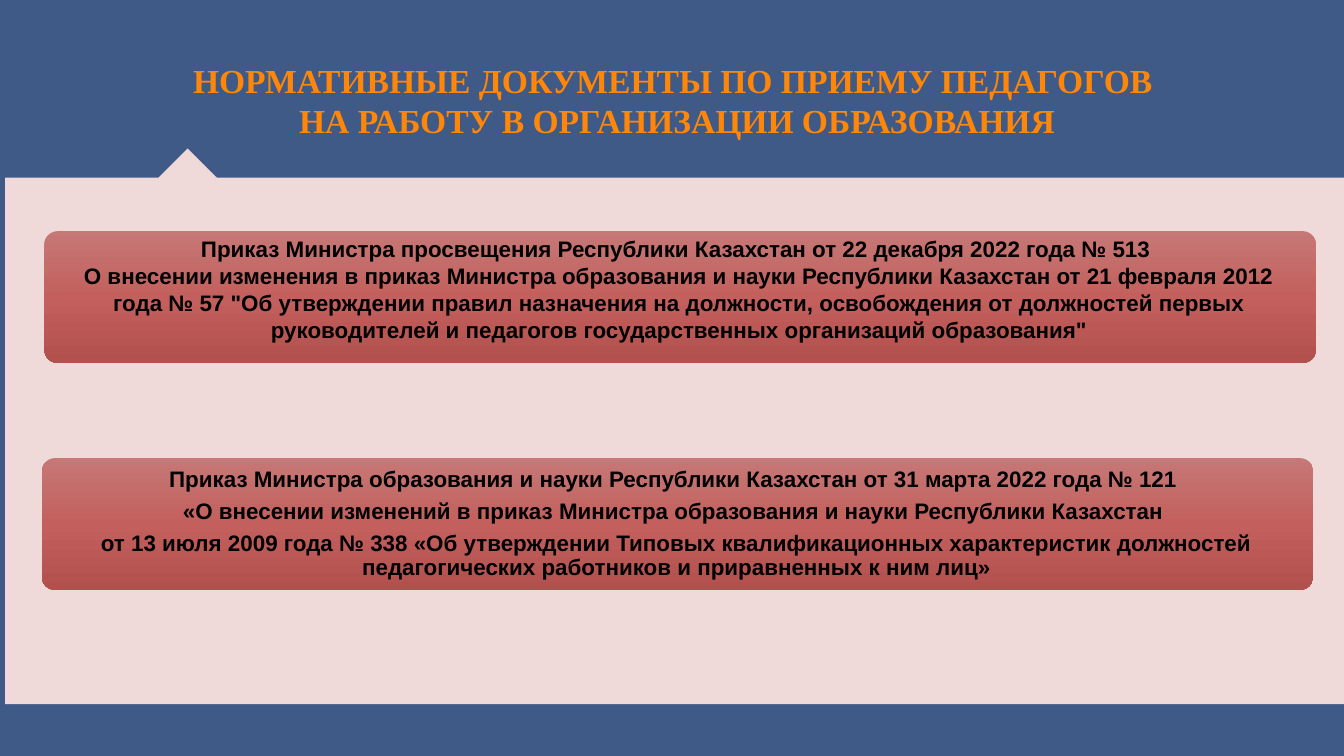
import copy
from dataclasses import dataclass

import pptx
import pptx.dml.color
import pptx.enum.shapes
import pptx.enum.text
import pptx.oxml.ns
import pptx.util
from pptx.util import Cm

KIND = pptx.enum.shapes.MSO_SHAPE
ANCHOR = pptx.enum.text.MSO_ANCHOR


@dataclass(frozen=True)
class Theme:
    back: str = "3F5A87"
    panel: str = "F0D9D9"
    title: str = "FF8607"
    ink: str = "000000"
    card: tuple[str, ...] = ("C57876", "C3605D", "B2504E")
    serif: str = "Times New Roman"
    sans: str = "Arial"
    head: float = 18
    body: float = 12


@dataclass(frozen=True)
class Box:
    left: float
    top: float
    width: float
    height: float

    def cm(self) -> list[Cm]:
        return [Cm(v) for v in (self.left, self.top, self.width, self.height)]


@dataclass(frozen=True)
class Card:
    frame: Box
    area: Box
    lines: tuple[str, ...]
    pitch: float = 1.0
    after: float = 0


THEME = Theme()
WIDE, HIGH = 25.4, 14.29
CARDS = (
    Card(
        Box(0.84, 4.37, 24.03, 2.49),
        Box(1.17, 4.29, 23.34, 2.34),
        (
            "Приказ Министра просвещения Республики Казахстан от 22 декабря 2022 года № 513 ",
            "О внесении изменения в приказ Министра образования и науки Республики Казахстан "
            "от 21 февраля 2012 года № 57 \"Об утверждении правил назначения на должности, "
            "освобождения от должностей первых руководителей и педагогов государственных "
            "организаций образования\"",
        ),
    ),
    Card(
        Box(0.79, 8.66, 24.03, 2.49),
        Box(1.12, 8.74, 23.34, 2.34),
        (
            "Приказ Министра образования и науки Республики Казахстан от 31 марта 2022 года № 121 ",
            "«О внесении изменений в приказ Министра образования и науки Республики Казахстан ",
            "от 13 июля 2009 года № 338 «Об утверждении Типовых квалификационных характеристик "
            "должностей педагогических работников и приравненных к ним лиц»",
        ),
        pitch=0.9,
        after=4.2,
    ),
)


def rgb(code: str) -> pptx.dml.color.RGBColor:
    return pptx.dml.color.RGBColor.from_string(code)


def shade(shape, tones: tuple[str, ...]) -> None:
    """Fill from top to bottom with three evenly spaced tones."""
    shape.fill.gradient()
    shape.fill.gradient_angle = 270
    stops = shape._element.spPr.find(".//" + pptx.oxml.ns.qn("a:gsLst"))
    stops.insert(1, copy.deepcopy(stops[0]))
    for i, (stop, tone) in enumerate(zip(shape.fill.gradient_stops, tones)):
        stop.position = i / (len(tones) - 1)
        stop.color.rgb = rgb(tone)


def block(slide, kind, box: Box, *tones: str, turn: float = 0):
    shape = slide.shapes.add_shape(kind, *box.cm())
    shape.shadow.inherit = False
    shape.line.fill.background()
    shape.rotation = turn
    if len(tones) > 1:
        shade(shape, tones)
    else:
        shape.fill.solid()
        shape.fill.fore_color.rgb = rgb(tones[0])
    return shape


def write(slide, box: Box, lines: tuple[str, ...], *, size: float, font: str,
          color: str, anchor=ANCHOR.TOP, inset: float | None = None,
          pitch: float = 1.0, after: float = 0) -> None:
    frame = slide.shapes.add_textbox(*box.cm()).text_frame
    frame.word_wrap = True
    frame.vertical_anchor = anchor
    if inset is not None:
        frame.margin_left = frame.margin_right = Cm(inset)
        frame.margin_top = frame.margin_bottom = Cm(inset)
    for i, line in enumerate(lines):
        para = frame.add_paragraph() if i else frame.paragraphs[0]
        para.alignment = pptx.enum.text.PP_ALIGN.CENTER
        para.line_spacing = pitch
        para.space_after = pptx.util.Pt(after)
        run = para.add_run()
        run.text = line
        run.font.size = pptx.util.Pt(size)
        run.font.name = font
        run.font.bold = True
        run.font.color.rgb = rgb(color)


def draw(slide, card: Card) -> None:
    shape = block(slide, KIND.ROUNDED_RECTANGLE, card.frame, *THEME.card)
    shape.adjustments[0] = 0.1
    write(slide, card.area, card.lines, size=THEME.body, font=THEME.sans,
          color=THEME.ink, anchor=ANCHOR.MIDDLE, inset=0.08,
          pitch=card.pitch, after=card.after)


def main() -> None:
    deck = pptx.Presentation()
    deck.slide_width, deck.slide_height = Cm(WIDE), Cm(HIGH)
    slide = deck.slides.add_slide(deck.slide_layouts[6])
    block(slide, KIND.RECTANGLE, Box(0, 0, WIDE, HIGH), THEME.back)
    write(slide, Box(1.5, 1, 22.6, 1.8),
          ("НОРМАТИВНЫЕ ДОКУМЕНТЫ ПО ПРИЕМУ ПЕДАГОГОВ ",
           "НА РАБОТУ В ОРГАНИЗАЦИИ ОБРАЗОВАНИЯ"),
          size=THEME.head, font=THEME.serif, color=THEME.title)
    block(slide, KIND.RECTANGLE, Box(0.1, 3.36, 25.3, 9.95), THEME.panel)
    block(slide, KIND.RIGHT_TRIANGLE, Box(3.15, 2.97, 0.79, 0.79), THEME.panel, turn=135)
    for card in CARDS:
        draw(slide, card)
    deck.save("out.pptx")


if __name__ == "__main__":
    main()
